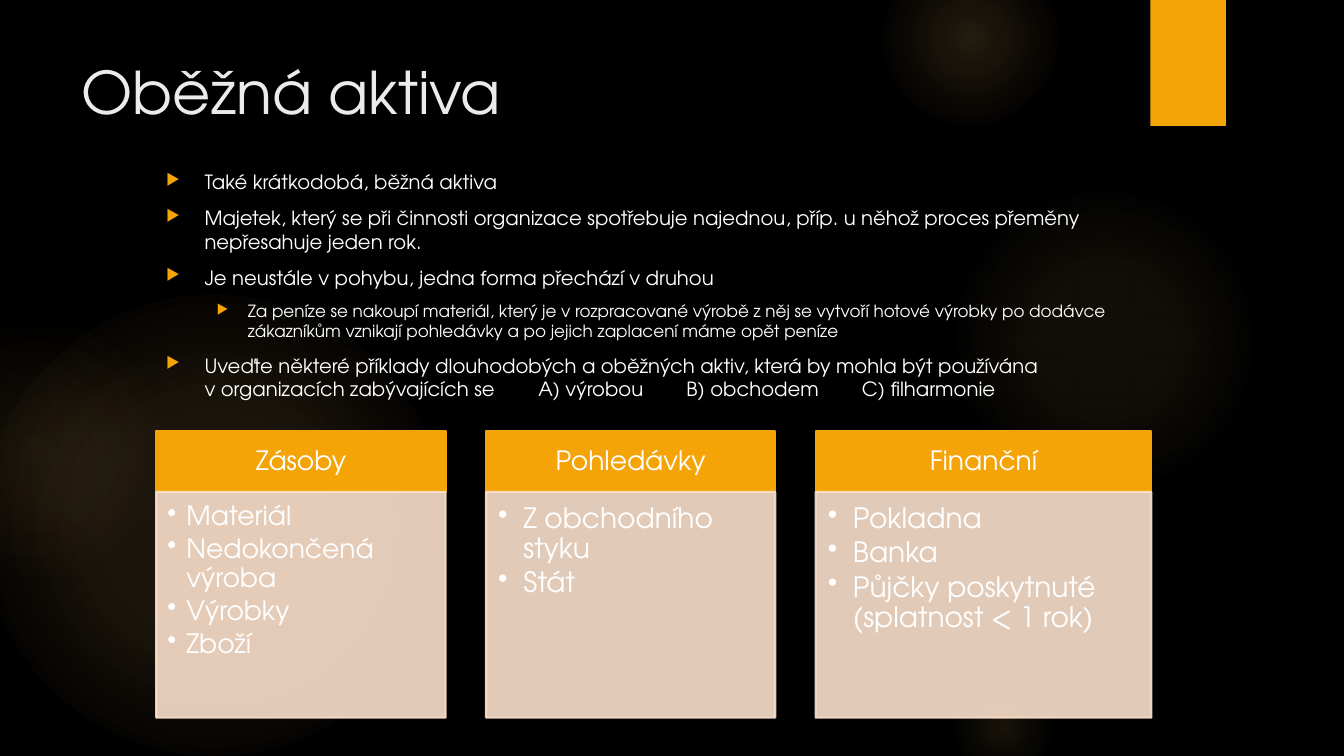
from lxml import etree
from pptx import Presentation
from pptx.dml.color import RGBColor
from pptx.enum.shapes import MSO_SHAPE
from pptx.enum.text import MSO_ANCHOR, PP_ALIGN
from pptx.oxml import parse_xml
from pptx.oxml.ns import qn
from pptx.util import Inches, Pt

RECT, OVAL = MSO_SHAPE.RECTANGLE, MSO_SHAPE.OVAL
TOP, MIDDLE = MSO_ANCHOR.TOP, MSO_ANCHOR.MIDDLE
LEFT, CENTER = PP_ALIGN.LEFT, PP_ALIGN.CENTER

BLACK = RGBColor(0x00, 0x00, 0x00)
WHITE = RGBColor(0xFF, 0xFF, 0xFF)
TITLE_GREY = RGBColor(0xEB, 0xEB, 0xEB)
ORANGE = RGBColor(0xF5, 0xA4, 0x08)
PEACH = RGBColor(0xFB, 0xE0, 0xCC)
GLOW = RGBColor(0xFA, 0xC9, 0x6A)
GLOW_RED = RGBColor(0xF5, 0x9B, 0x74)

FONT = "TeX Gyre Adventor"
NS = "http://schemas.openxmlformats.org/drawingml/2006/main"

GLOWS = [
    (-0.17, 2.92, 4.58, [(0, 11), (36, 10), (75, 0)], GLOW),
    (-0.92, 3.17, 2.58, [(0, 8), (36, 5), (71, 0)], GLOW_RED),
    (9.41, 1.83, 3.08, [(0, 7), (36, 6), (69, 0)], GLOW),
    (8.75, -0.5, 1.75, [(0, 14), (36, 7), (73, 0)], GLOW),
    (9.41, 6.67, 1.08, [(0, 10), (31, 5), (66, 0)], GLOW),
]
POINTS = [
    (0, "Také krátkodobá, běžná aktiva"),
    (0, "Majetek, který se při činnosti organizace spotřebuje najednou, "
        "příp. u něhož proces přeměny nepřesahuje jeden rok."),
    (0, "Je neustále v pohybu, jedna forma přechází v druhou"),
    (1, "Za peníze se nakoupí materiál, který je v rozpracované výrobě z něj "
        "se vytvoří hotové výrobky po dodávce zákazníkům vznikají pohledávky "
        "a po jejich zaplacení máme opět peníze"),
    (0, "Uveďte některé příklady dlouhodobých a oběžných aktiv, která by mohla "
        "být používána\vv organizacích zabývajících se"
        "\tA) výrobou\tB) obchodem\tC) filharmonie"),
]
POINT_STYLES = [(14, 0.38, 0.38), (12, 0.81, 0.31)]
TAB_STOPS = [3.69, 5.16, 6.9]
GROUPS = [
    ("Zásoby", 2.87, 19, 0.19, 0.11,
     ["Materiál", "Nedokončená výroba", "Výrobky", "Zboží"]),
    ("Pohledávky", 2.87, 20, 0.25, 0.12, ["Z obchodního styku", "Stát"]),
    ("Finanční", 3.33, 20, 0.25, 0.12,
     ["Pokladna", "Banka", "Půjčky poskytnuté (splatnost < 1 rok)"]),
]
GROUPS_LEFT, GROUP_GAP = 1.55, 0.4
HEAD_TOP, HEAD_HEIGHT, LIST_HEIGHT = 4.28, 0.6, 2.24


class SlideBuilder:
    def __init__(self, prs):
        self.slide = prs.slides.add_slide(prs.slide_layouts[5])
        self.slide.background.fill.solid()
        self.slide.background.fill.fore_color.rgb = BLACK

    def frame(self, tf, insets, anchor):
        tf.word_wrap = True
        tf.vertical_anchor = anchor
        (tf.margin_left, tf.margin_top,
         tf.margin_right, tf.margin_bottom) = [Inches(i) for i in insets]

    def paragraph(self, p, text, size, color=WHITE, align=LEFT):
        p.text = text
        p.alignment = align
        for r in p.runs:
            r.font.name = FONT
            r.font.size = Pt(size)
            r.font.color.rgb = color

    def bullet(self, p, char, left, hang, color=WHITE, scale=100, tabs=()):
        pPr = p._p.get_or_add_pPr()
        pPr.set("marL", str(Inches(left)))
        pPr.set("indent", str(-Inches(hang)))
        clr = etree.SubElement(pPr, qn("a:buClr"))
        etree.SubElement(clr, qn("a:srgbClr"), val=str(color))
        etree.SubElement(pPr, qn("a:buSzPct"), val=str(scale * 1000))
        etree.SubElement(pPr, qn("a:buChar"), char=char)
        if tabs:
            tab_list = etree.SubElement(pPr, qn("a:tabLst"))
            for pos in tabs:
                etree.SubElement(tab_list, qn("a:tab"),
                                 pos=str(Inches(pos)), algn="l")

    def title(self, text, x, y, w, h):
        sp = self.slide.shapes.title
        sp.left, sp.top, sp.width, sp.height = [Inches(v) for v in (x, y, w, h)]
        self.frame(sp.text_frame, (0.1, 0.05, 0.1, 0.05), MIDDLE)
        self.paragraph(sp.text_frame.paragraphs[0], text, 42, TITLE_GREY)

    def shape(self, kind, x, y, w, h):
        sp = self.slide.shapes.add_shape(
            kind, Inches(x), Inches(y), Inches(w), Inches(h))
        sp.shadow.inherit = False
        return sp

    def glow(self, x, y, size, stops, end_color):
        sp = self.shape(OVAL, x, y, size, size)
        sp.line.fill.background()
        colors = [GLOW, GLOW, end_color]
        gs = "".join(
            f'<a:gs pos="{pos * 1000}"><a:srgbClr val="{color}">'
            f'<a:alpha val="{alpha * 1000}"/></a:srgbClr></a:gs>'
            for (pos, alpha), color in zip(stops, colors))
        grad = parse_xml(
            f'<a:gradFill xmlns:a="{NS}" rotWithShape="1"><a:gsLst>{gs}</a:gsLst>'
            '<a:path path="circle"><a:fillToRect l="50000" t="50000" '
            'r="50000" b="50000"/></a:path></a:gradFill>')
        sp._element.spPr.find(qn("a:prstGeom")).addnext(grad)

    def box(self, x, y, w, h, color, opacity=100):
        sp = self.shape(RECT, x, y, w, h)
        sp.line.width = Pt(1.5)
        for fill in (sp.fill, sp.line.fill):
            fill.solid()
            fill.fore_color.rgb = color
        if opacity < 100:
            for clr in sp._element.spPr.iter(qn("a:srgbClr")):
                etree.SubElement(clr, qn("a:alpha"), val=str(opacity * 1000))
        return sp

    def tag(self, x, y, w, h):
        self.box(x, y, w, h, ORANGE).line.fill.background()

    def points(self, items, x, y, w, h):
        sp = self.slide.shapes.add_textbox(
            Inches(x), Inches(y), Inches(w), Inches(h))
        tf = sp.text_frame
        self.frame(tf, (0.1, 0.05, 0.1, 0.05), TOP)
        for i, (level, text) in enumerate(items):
            p = tf.add_paragraph() if i else tf.paragraphs[0]
            size, left, hang = POINT_STYLES[level]
            self.paragraph(p, text, size)
            p.level = level
            p.space_before, p.space_after = Pt(size * 0.2), Pt(6)
            self.bullet(p, "▶", left, hang, ORANGE, 80,
                        TAB_STOPS if "\t" in text else ())

    def group(self, x, head, w, size, indent, inset, items):
        tf = self.box(x, HEAD_TOP, w, HEAD_HEIGHT, ORANGE).text_frame
        self.frame(tf, (0.15, 0.08, 0.15, 0.08), MIDDLE)
        self.paragraph(tf.paragraphs[0], head, 19, align=CENTER)
        tf.paragraphs[0].line_spacing = 0.9
        tf = self.box(x, HEAD_TOP + HEAD_HEIGHT, w, LIST_HEIGHT,
                      PEACH, 90).text_frame
        self.frame(tf, (inset, inset, 0.15, 0.17), TOP)
        for i, text in enumerate(items):
            p = tf.add_paragraph() if i else tf.paragraphs[0]
            self.paragraph(p, text, size)
            p.line_spacing, p.space_after = 0.9, Pt(3)
            self.bullet(p, "•", indent, indent)


def main():
    prs = Presentation()
    prs.slide_width, prs.slide_height = Inches(13.33), Inches(7.5)
    s = SlideBuilder(prs)
    for glow in GLOWS:
        s.glow(*glow)
    s.tag(11.41, 0, 0.75, 1.25)
    s.title("Oběžná aktiva", 0.71, 0.5, 10.29, 0.8)
    s.points(POINTS, 1.55, 1.64, 9.61, 2.52)
    x = GROUPS_LEFT
    for head, w, *style in GROUPS:
        s.group(x, head, w, *style)
        x += w + GROUP_GAP
    prs.save("out.pptx")


if __name__ == "__main__":
    main()
